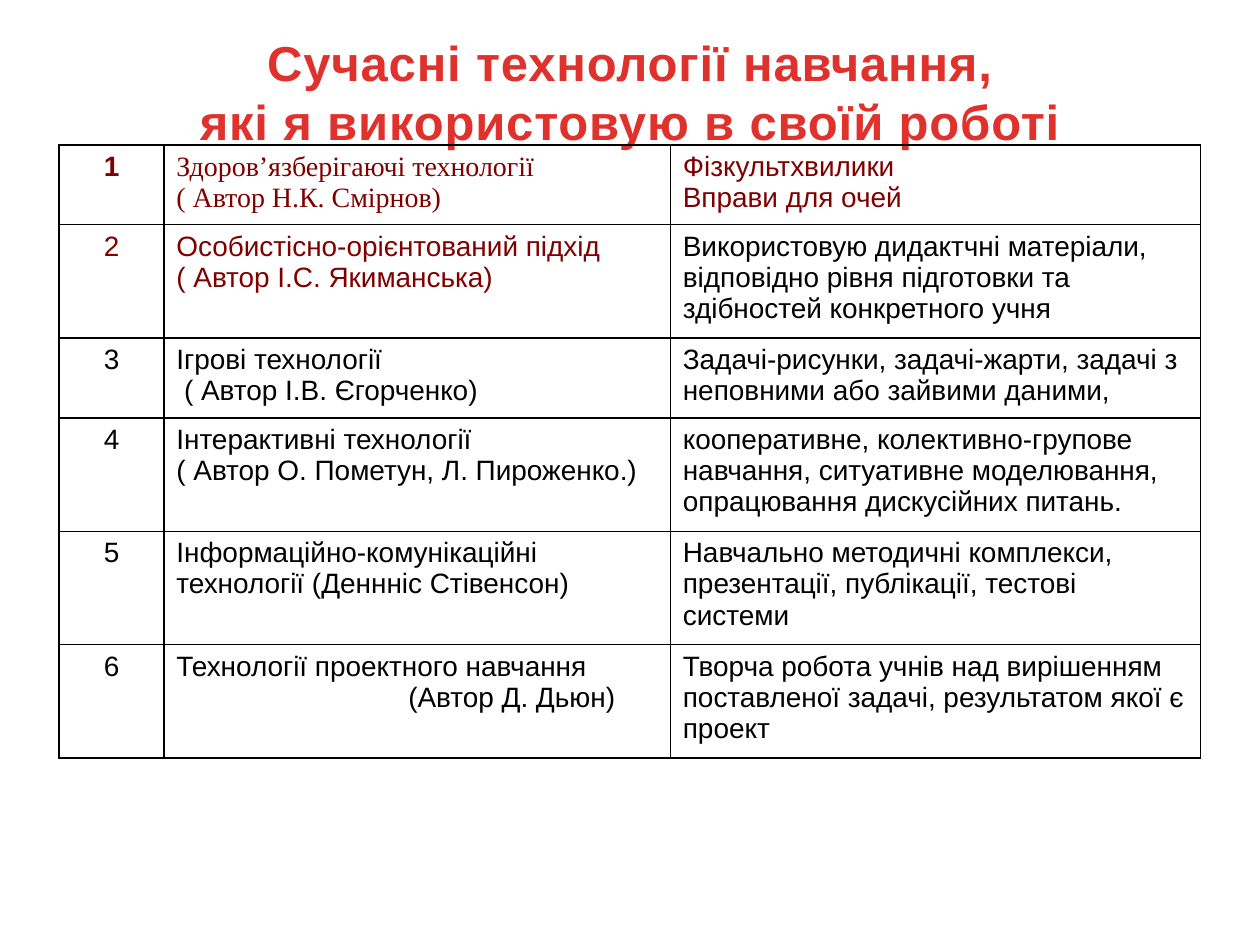
from pptx import Presentation
from pptx.dml.color import RGBColor
from pptx.enum.text import MSO_AUTO_SIZE, PP_ALIGN
from pptx.oxml import parse_xml
from pptx.oxml.ns import nsdecls
from pptx.util import Inches, Pt

RED = RGBColor(0xE0, 0x32, 0x2D)
MAROON = RGBColor(0x80, 0x00, 0x00)
BLACK = RGBColor(0x00, 0x00, 0x00)

TITLE = "Сучасні технології навчання,\nякі я використовую в своїй роботі"
COL_WIDTHS = (0.83, 4.02, 4.21)
ROW_HEIGHTS = (0.63, 0.9, 0.63, 0.9, 0.9, 0.9)
ROWS = (
    ("Здоров’язберігаючі технології\n( Автор Н.К. Смірнов)",
     "Фізкультхвилики\nВправи для очей"),
    ("Особистісно-орієнтований підхід\n( Автор І.С. Якиманська)",
     "Використовую дидактчні матеріали, відповідно рівня підготовки та "
     "здібностей конкретного учня"),
    ("Ігрові технології\n ( Автор І.В. Єгорченко)",
     "Задачі-рисунки, задачі-жарти, задачі з неповними або зайвими даними,"),
    ("Інтерактивні технології\n( Автор О. Пометун, Л. Пироженко.)",
     "кооперативне, колективно-групове навчання, ситуативне моделювання, "
     "опрацювання дискусійних питань."),
    ("Інформаційно-комунікаційні технології (Деннніс Стівенсон)",
     "Навчально методичні комплекси, презентації, публікації, тестові системи"),
    ("Технології проектного навчання\n(Автор Д. Дьюн)",
     "Творча робота учнів над вирішенням поставленої задачі, результатом "
     "якої є проект"),
)


def style_text(tf, size, color, font="Arial", bold=False, align=PP_ALIGN.LEFT):
    for p in tf.paragraphs:
        p.alignment = align
        for r in p.runs:
            r.font.name = font
            r.font.size = Pt(size)
            r.font.bold = bold
            r.font.color.rgb = color


def add_title(slide, left, top, width, height):
    tf = slide.shapes.add_textbox(left, top, width, height).text_frame
    tf.word_wrap = False
    tf.auto_size = MSO_AUTO_SIZE.SHAPE_TO_FIT_TEXT
    tf.text = TITLE
    style_text(tf, 28, RED, bold=True, align=PP_ALIGN.CENTER)
    for p in tf.paragraphs:
        for r in p.runs:
            r.font._element.set("spc", "50")


def add_borders(cell):
    tc_pr = cell._tc.get_or_add_tcPr()
    for i, side in enumerate(("lnL", "lnR", "lnT", "lnB")):
        tc_pr.insert(i, parse_xml(
            f'<a:{side} {nsdecls("a")} w="{Pt(1)}"><a:solidFill>'
            f'<a:srgbClr val="{BLACK}"/></a:solidFill></a:{side}>'))


def add_technologies(slide, left, top, width, height):
    table = slide.shapes.add_table(
        len(ROWS), len(COL_WIDTHS), left, top, width, height).table
    table.first_row = False
    table.horz_banding = False
    for col, w in zip(table.columns, COL_WIDTHS):
        col.width = Inches(w)
    for row, h in zip(table.rows, ROW_HEIGHTS):
        row.height = Inches(h)
    for i, texts in enumerate(ROWS):
        for j, text in enumerate((str(i + 1), *texts)):
            cell = table.cell(i, j)
            cell.fill.background()
            add_borders(cell)
            cell.text_frame.text = text
            style_text(
                cell.text_frame, 16,
                MAROON if i == 0 or (i, j) in ((1, 0), (1, 1)) else BLACK,
                font="Times New Roman" if (i, j) == (0, 1) else "Arial",
                bold=(i, j) == (0, 0),
                align=PP_ALIGN.LEFT if j else PP_ALIGN.CENTER)
    author = table.cell(len(ROWS) - 1, 1).text_frame.paragraphs[1]
    author._p.get_or_add_pPr().set("marL", str(Inches(1.84)))


def main():
    prs = Presentation()
    prs.slide_width, prs.slide_height = Inches(10), Inches(7.5)
    s = prs.slides.add_slide(prs.slide_layouts[6])
    add_title(s, Inches(1.44), Inches(0.21), Inches(7.12), Inches(1.04))
    add_technologies(s, Inches(0.47), Inches(1.15),
                     Inches(sum(COL_WIDTHS)), Inches(sum(ROW_HEIGHTS)))
    prs.save("out.pptx")


if __name__ == "__main__":
    main()
